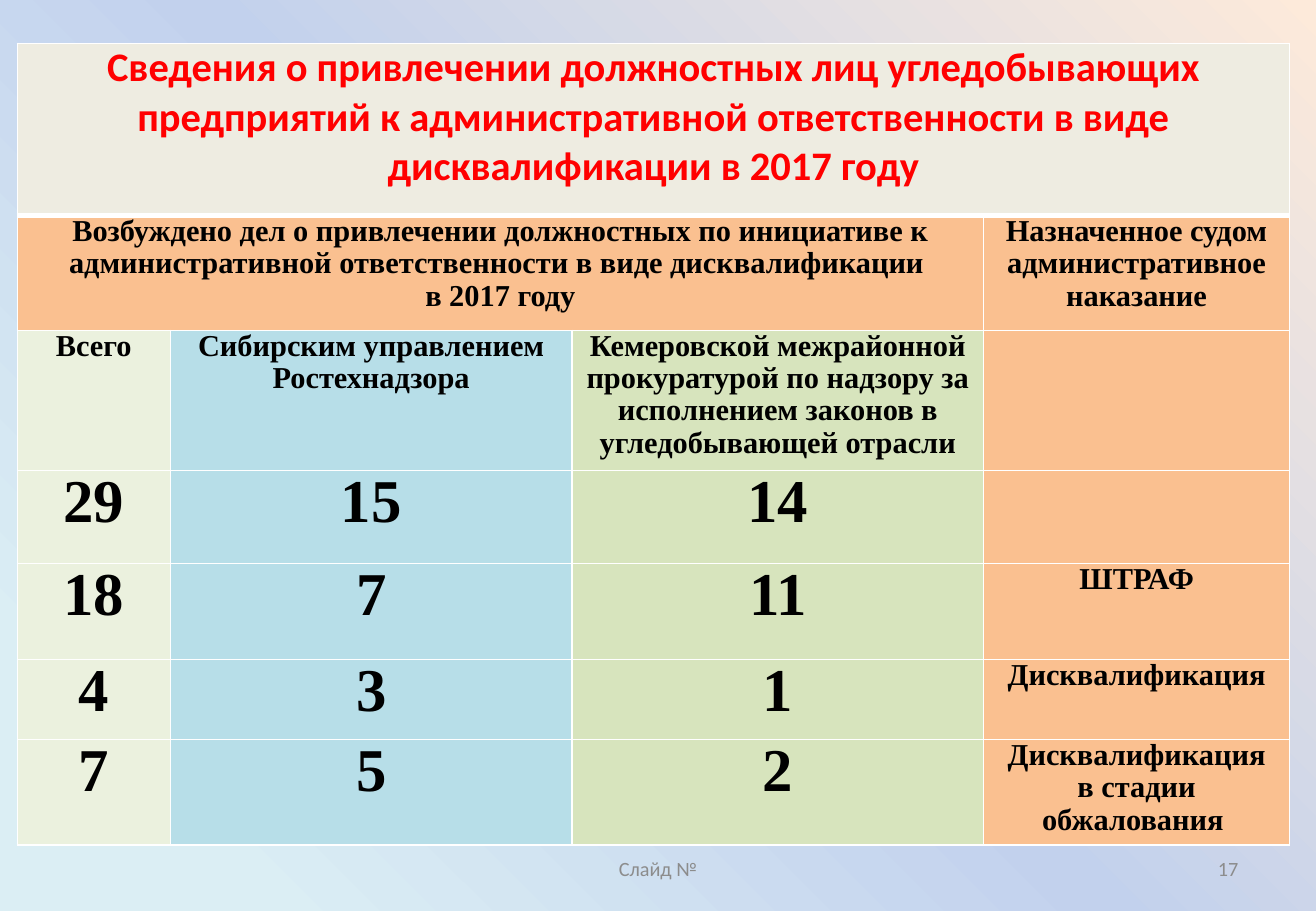
from copy import deepcopy

from lxml import etree
from pptx import Presentation
from pptx.dml.color import RGBColor
from pptx.enum.text import MSO_ANCHOR, PP_ALIGN
from pptx.oxml.ns import qn
from pptx.util import Cm, Pt

CENTER, RIGHT = PP_ALIGN.CENTER, PP_ALIGN.RIGHT
MIDDLE = MSO_ANCHOR.MIDDLE

SKY = [(0.12, "DBEEF4"), (0.5, "C2D1ED"), (1, "FDEADA")]
ORANGE = "FAC090"
FILLS = ["EBF1DE", "B7DEE8", "D7E4BD", ORANGE]
COLS = [3.2, 8.4, 8.6, 6.4]
ROWS = [3.6, 2.4, 2.8, 1.95, 2, 1.68, 2.08]
TITLE = ("Сведения о привлечении должностных лиц угледобывающих предприятий "
         "к административной ответственности в виде дисквалификации в 2017 году")
CASES = ("Возбуждено дел о привлечении должностных по инициативе к "
         "административной ответственности в виде дисквалификации \nв 2017 году")
DATA = [
    [TITLE, "", "", ""],
    [CASES, "", "", "Назначенное судом административное наказание"],
    ["Всего", "Сибирским управлением Ростехнадзора",
     "Кемеровской межрайонной прокуратурой по надзору за исполнением законов "
     "в угледобывающей отрасли", ""],
    ["29", "15", "14", ""],
    ["18", "7", "11", "ШТРАФ"],
    ["4", "3", "1", "Дисквалификация"],
    ["7", "5", "2", "Дисквалификация\nв стадии обжалования "],
]
HEAD = {"size": Pt(24), "name": "Calibri", "bold": True}
BODY = {"size": Pt(18), "name": "Times New Roman", "bold": True}
COUNT = {**BODY, "size": Pt(36)}
FOOT = {"size": Pt(12), "name": "Calibri"}


def rgb(code):
    return RGBColor.from_string(code)


def style(frame, font, color, align, space=None):
    for para in frame.paragraphs:
        para.alignment = align
        para.line_spacing = space
        for key, value in font.items():
            setattr(para.font, key, value)
            for run in para.runs:
                setattr(run.font, key, value)
        for run in para.runs:
            run.font.color.rgb = rgb(color)


def paint_sky(slide):
    fill = slide.background.fill
    fill.gradient()
    fill.gradient_angle = 45
    stops = slide.element.xpath(".//a:gsLst")[0]
    stops.append(deepcopy(stops[0]))
    for stop, (place, color) in zip(fill.gradient_stops, SKY):
        stop.position = place
        stop.color.rgb = rgb(color)


def edge(cell, widths):
    """Draw white borders; widths in points: left, right, top, bottom."""
    props = cell._tc.get_or_add_tcPr()
    for i, (side, width) in enumerate(zip("LRTB", widths)):
        line = etree.Element(qn("a:ln" + side), w=str(Pt(width)))
        solid = etree.SubElement(line, qn("a:solidFill"))
        etree.SubElement(solid, qn("a:srgbClr"), val="FFFFFF")
        props.insert(i, line)


def fill_cell(cell, text, row, col):
    cell.text = text
    cell.margin_left = cell.margin_right = Cm(0.18)
    cell.margin_top = cell.margin_bottom = 0
    cell.fill.solid()
    if row == 0:
        color = "EEECE1"
        style(cell.text_frame, HEAD, "FF0000", CENTER)
    else:
        color = ORANGE if row == 1 else FILLS[col]
        font = COUNT if text.isdigit() else BODY
        style(cell.text_frame, font, "000000", CENTER, 0.96)
    cell.fill.fore_color.rgb = rgb(color)
    edge(cell, (1, 1, 3 if row == 1 else 1, 3 if row == 0 else 1))


def add_cases(slide, left, top):
    table = slide.shapes.add_table(
        len(ROWS), len(COLS), Cm(left), Cm(top),
        Cm(sum(COLS)), Cm(sum(ROWS))).table
    for col, width in zip(table.columns, COLS):
        col.width = Cm(width)
    for row, height in zip(table.rows, ROWS):
        row.height = Cm(height)
    for r, texts in enumerate(DATA):
        for c, text in enumerate(texts):
            fill_cell(table.cell(r, c), text, r, c)
    table.cell(0, 0).merge(table.cell(0, 3))
    table.cell(1, 0).merge(table.cell(1, 2))


def add_note(slide, text, left, top, width, height, align):
    box = slide.shapes.add_textbox(Cm(left), Cm(top), Cm(width), Cm(height))
    frame = box.text_frame
    frame.word_wrap = True
    frame.vertical_anchor = MIDDLE
    frame.text = text
    style(frame, FOOT, "8C8C8C", align)


def main():
    deck = Presentation()
    deck.slide_width, deck.slide_height = Cm(27.51), Cm(19.05)
    slide = deck.slides.add_slide(deck.slide_layouts[6])
    paint_sky(slide)
    add_note(slide, "Слайд №", 9.4, 17.65, 8.71, 1.02, CENTER)
    add_note(slide, "17", 19.71, 17.65, 6.43, 1.02, RIGHT)
    add_cases(slide, 0.36, 0.91)
    deck.save("out.pptx")


if __name__ == "__main__":
    main()
